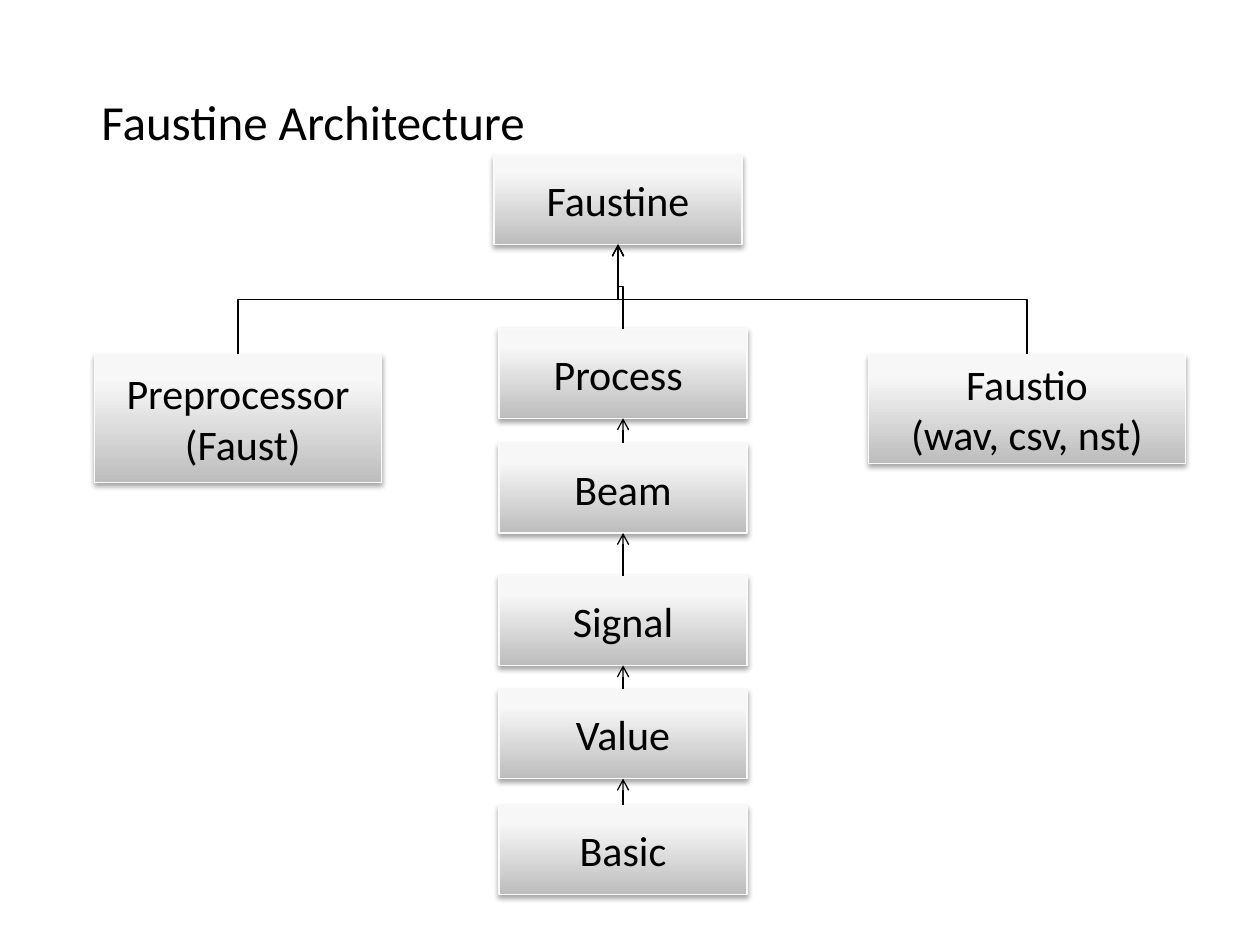
from copy import deepcopy
from dataclasses import dataclass

from lxml import etree
from pptx import Presentation
from pptx.dml.color import RGBColor
from pptx.enum.shapes import MSO_CONNECTOR, MSO_SHAPE
from pptx.enum.text import MSO_ANCHOR, PP_ALIGN
from pptx.oxml import parse_xml
from pptx.oxml.ns import nsdecls, qn
from pptx.shapes.autoshape import Shape
from pptx.shapes.connector import Connector
from pptx.slide import Slide
from pptx.text.text import TextFrame
from pptx.util import Inches, Pt

RECTANGLE = MSO_SHAPE.RECTANGLE
STRAIGHT, ELBOW = MSO_CONNECTOR.STRAIGHT, MSO_CONNECTOR.ELBOW
CENTER, MIDDLE = PP_ALIGN.CENTER, MSO_ANCHOR.MIDDLE
TOP_SITE, BOTTOM_SITE = 0, 2

BLACK = RGBColor(0x00, 0x00, 0x00)
BORDER = RGBColor(0xF9, 0xF9, 0xF9)
GRADIENT = (
    (0.0, RGBColor(0xBD, 0xBD, 0xBD)),
    (0.8, RGBColor(0xF7, 0xF7, 0xF7)),
    (1.0, RGBColor(0xF8, 0xF8, 0xF8)),
)
FONT = "Calibri"

# Grid of 100 columns by 75 rows
SLIDE_W, SLIDE_H = Inches(10), Inches(7.5)
COL, ROW = SLIDE_W / 100, SLIDE_H / 75

MODULE_COLS, MODULE_ROWS = 19.7, 7.1
STACK_LEFT = 39.6


@dataclass(frozen=True)
class Module:
    text: str
    left: float
    top: float
    cols: float = MODULE_COLS
    rows: float = MODULE_ROWS


ROOT = Module("Faustine", 39.2, 12.3)
PREPROCESSOR = Module("Preprocessor\n (Faust)", 7.5, 28.1, 22.8, 10.2)
FAUSTIO = Module("Faustio\n(wav, csv, nst)", 68.9, 28.1, 25.2, 8.7)
STACK = [
    Module(text, STACK_LEFT, top)
    for text, top in (
        ("Process ", 26.1),
        ("Beam", 35.2),
        ("Signal", 45.7),
        ("Value", 54.7),
        ("Basic", 63.9),
    )
]


def place(left: float, top: float, cols: float, rows: float) -> tuple[int, ...]:
    """Turn grid units into slide lengths."""
    return round(left * COL), round(top * ROW), round(cols * COL), round(rows * ROW)


def write(frame: TextFrame, text: str, size: int) -> None:
    frame.word_wrap = True
    frame.vertical_anchor = MIDDLE
    frame.text = text
    for paragraph in frame.paragraphs:
        paragraph.alignment = CENTER
        for run in paragraph.runs:
            run.font.name = FONT
            run.font.size = Pt(size)
            run.font.color.rgb = BLACK


def add_gradient(box: Shape) -> None:
    box.fill.gradient()
    box.fill.gradient_angle = 90
    stop_list = box._element.spPr.find(qn("a:gradFill")).find(qn("a:gsLst"))
    stop_list.append(deepcopy(stop_list[-1]))
    for stop, (position, color) in zip(box.fill.gradient_stops, GRADIENT):
        stop.position = position
        stop.color.rgb = color


def add_shadow(box: Shape) -> None:
    box.shadow.inherit = False
    effects = box._element.spPr.find(qn("a:effectLst"))
    effects.append(parse_xml(
        f'<a:outerShdw {nsdecls("a")} blurRad="{Pt(3.1)}" dist="{Pt(1.8)}" '
        'dir="5400000" rotWithShape="0"><a:srgbClr val="000000">'
        '<a:alpha val="35000"/></a:srgbClr></a:outerShdw>'
    ))


def add_module(slide: Slide, module: Module) -> Shape:
    box = slide.shapes.add_shape(
        RECTANGLE, *place(module.left, module.top, module.cols, module.rows)
    )
    add_gradient(box)
    box.line.color.rgb = BORDER
    box.line.width = Pt(0.75)
    add_shadow(box)
    write(box.text_frame, module.text, 24)
    return box


def turn_upward(arrow: Connector) -> None:
    """Rotate an elbow so that it leaves and arrives vertically."""
    run, rise = arrow.end_x - arrow.begin_x, arrow.begin_y - arrow.end_y
    mid_x = (arrow.begin_x + arrow.end_x) // 2
    mid_y = (arrow.begin_y + arrow.end_y) // 2
    frame = arrow._element.spPr.find(qn("a:xfrm"))
    for flip in ("flipH", "flipV"):
        frame.attrib.pop(flip, None)
    frame.set("rot", "16200000")
    if run < 0:
        frame.set("flipV", "1")
    arrow.width, arrow.height = rise, abs(run)
    arrow.left, arrow.top = mid_x - rise // 2, mid_y - abs(run) // 2


def add_arrow(slide: Slide, lower: Shape, upper: Shape, kind: int) -> None:
    arrow = slide.shapes.add_connector(kind, 0, 0, 0, 0)
    arrow.begin_connect(lower, TOP_SITE)
    arrow.end_connect(upper, BOTTOM_SITE)
    if kind == ELBOW:
        turn_upward(arrow)
    arrow.line.color.rgb = BLACK
    arrow.line.width = Pt(0.75)
    outline = arrow.line._get_or_add_ln()
    etree.SubElement(outline, qn("a:tailEnd"), type="arrow")
    etree.SubElement(arrow._element.spPr, qn("a:effectLst"))


def main() -> None:
    deck = Presentation()
    deck.slide_width, deck.slide_height = SLIDE_W, SLIDE_H
    slide = deck.slides.add_slide(deck.slide_layouts[6])

    # Modules
    stack = [add_module(slide, module) for module in STACK]
    preprocessor = add_module(slide, PREPROCESSOR)
    faustio = add_module(slide, FAUSTIO)
    root = add_module(slide, ROOT)

    # Title
    title = slide.shapes.add_textbox(*place(5.1, 3.7, 39.5, 11.8))
    write(title.text_frame, "Faustine Architecture", 28)

    # Branches into the root, then the chain of the middle stack
    for branch in (preprocessor, stack[0], faustio):
        add_arrow(slide, branch, root, ELBOW)
    for upper, lower in zip(stack, stack[1:]):
        add_arrow(slide, lower, upper, STRAIGHT)

    deck.save("out.pptx")


if __name__ == "__main__":
    main()
